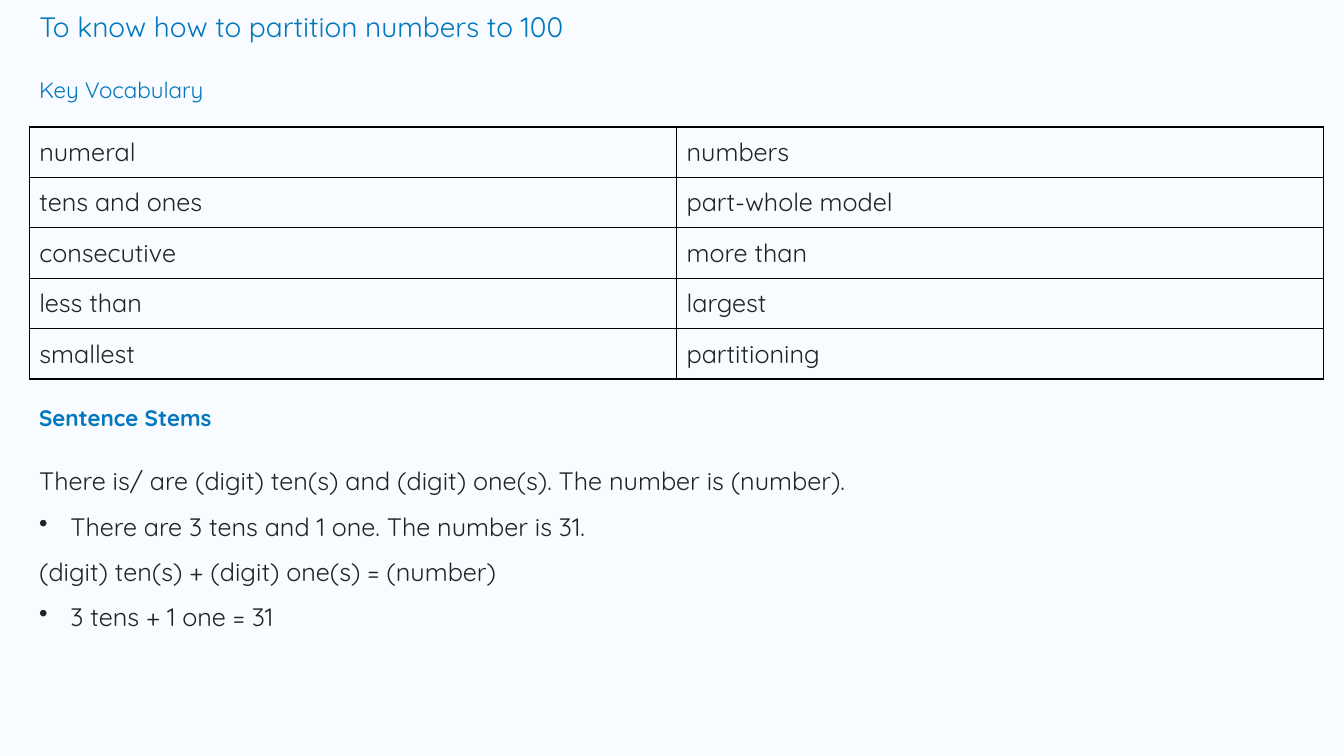
"""Build a vocabulary and sentence stems slide on partitioning numbers to 100."""
import pptx
import pptx.dml.color
import pptx.enum.text
import pptx.oxml
import pptx.oxml.ns
import pptx.util
from pptx.util import Inches

COLOURS = {"background": "F8FBFF", "heading": "0277BD", "body": "222222", "border": "000000"}
LEFT = 0.29
WIDTH = 12.84
VOCABULARY = [
    ("numeral", "numbers"),
    ("tens and ones", "part-whole model"),
    ("consecutive", "more than"),
    ("less than", "largest"),
    ("smallest", "partitioning"),
]
STEMS = [
    ("There is/ are (digit) ten(s) and (digit) one(s). The number is (number).", False),
    ("There are 3 tens and 1 one. The number is 31.", True),
    ("(digit) ten(s) + (digit) one(s) = (number)", False),
    ("3 tens + 1 one = 31", True),
]


def rgb(name):
    return pptx.dml.color.RGBColor.from_string(COLOURS[name])


def write(paragraph, text, size=18, colour="body", bold=False, spacing=None, bullet=False):
    paragraph.alignment = pptx.enum.text.PP_ALIGN.LEFT
    if spacing:
        paragraph.line_spacing = spacing
    if bullet:
        properties = paragraph._p.get_or_add_pPr()
        properties.set("marL", str(Inches(0.31)))
        properties.set("indent", str(-Inches(0.31)))
        mark = pptx.oxml.parse_xml(f'<a:buChar {pptx.oxml.ns.nsdecls("a")} char="•"/>')
        properties.append(mark)
    run = paragraph.add_run()
    run.text = text
    run.font.name = "Quicksand"
    run.font.size = pptx.util.Pt(size)
    run.font.bold = bold
    run.font.color.rgb = rgb(colour)


class LessonSlide:
    def __init__(self, presentation):
        self.slide = presentation.slides.add_slide(presentation.slide_layouts[5])
        fill = self.slide.background.fill
        fill.solid()
        fill.fore_color.rgb = rgb("background")

    def title(self, text, top, height):
        heading = self.slide.shapes.title
        heading.left, heading.top = Inches(LEFT), Inches(top)
        heading.width, heading.height = Inches(WIDTH - 0.5), Inches(height)
        frame = heading.text_frame
        frame.auto_size = pptx.enum.text.MSO_AUTO_SIZE.NONE
        frame.vertical_anchor = pptx.enum.text.MSO_ANCHOR.MIDDLE
        write(frame.paragraphs[0], text, size=20, colour="heading")

    def text(self, lines, top, width, height, **style):
        frame = self.slide.shapes.add_textbox(
            Inches(LEFT), Inches(top), Inches(width), Inches(height)).text_frame
        frame.word_wrap = True
        for index, (line, bullet) in enumerate(lines):
            paragraph = frame.add_paragraph() if index else frame.paragraphs[0]
            write(paragraph, line, bullet=bullet, **style)

    def subheading(self, text, top, bold=False):
        self.text([(text, False)], top, 2.97, 0.46, size=16, colour="heading", bold=bold)

    def table(self, rows, top, height):
        grid = self.slide.shapes.add_table(
            len(rows), len(rows[0]), Inches(LEFT), Inches(top), Inches(WIDTH), Inches(height)).table
        grid.first_row = grid.horz_banding = False
        for row, words in enumerate(rows):
            for column, word in enumerate(words):
                cell = grid.cell(row, column)
                cell.margin_left = cell.margin_right = Inches(0.1)
                cell.margin_top = cell.margin_bottom = Inches(0.09)
                cell.vertical_anchor = pptx.enum.text.MSO_ANCHOR.MIDDLE
                cell.fill.background()
                self.border(cell)
                write(cell.text_frame.paragraphs[0], word)

    def border(self, cell):
        properties = cell._tc.get_or_add_tcPr()
        for index, side in enumerate("LRTB"):
            line = pptx.oxml.parse_xml(
                f'<a:ln{side} {pptx.oxml.ns.nsdecls("a")} w="{pptx.util.Pt(1)}"><a:solidFill>'
                f'<a:srgbClr val="{COLOURS["border"]}"/></a:solidFill></a:ln{side}>')
            properties.insert(index, line)


def main():
    presentation = pptx.Presentation()
    presentation.slide_width = Inches(13.33)
    presentation.slide_height = Inches(7.5)
    lesson = LessonSlide(presentation)
    lesson.title("To know how to partition numbers to 100", 0.04, 0.44)
    lesson.subheading("Key Vocabulary", 0.71)
    lesson.table(VOCABULARY, 1.26, 2.5)
    lesson.subheading("Sentence Stems", 3.96, bold=True)
    lesson.text(STEMS, 4.42, WIDTH, 1.86, spacing=1.5)
    presentation.save("out.pptx")


if __name__ == "__main__":
    main()
